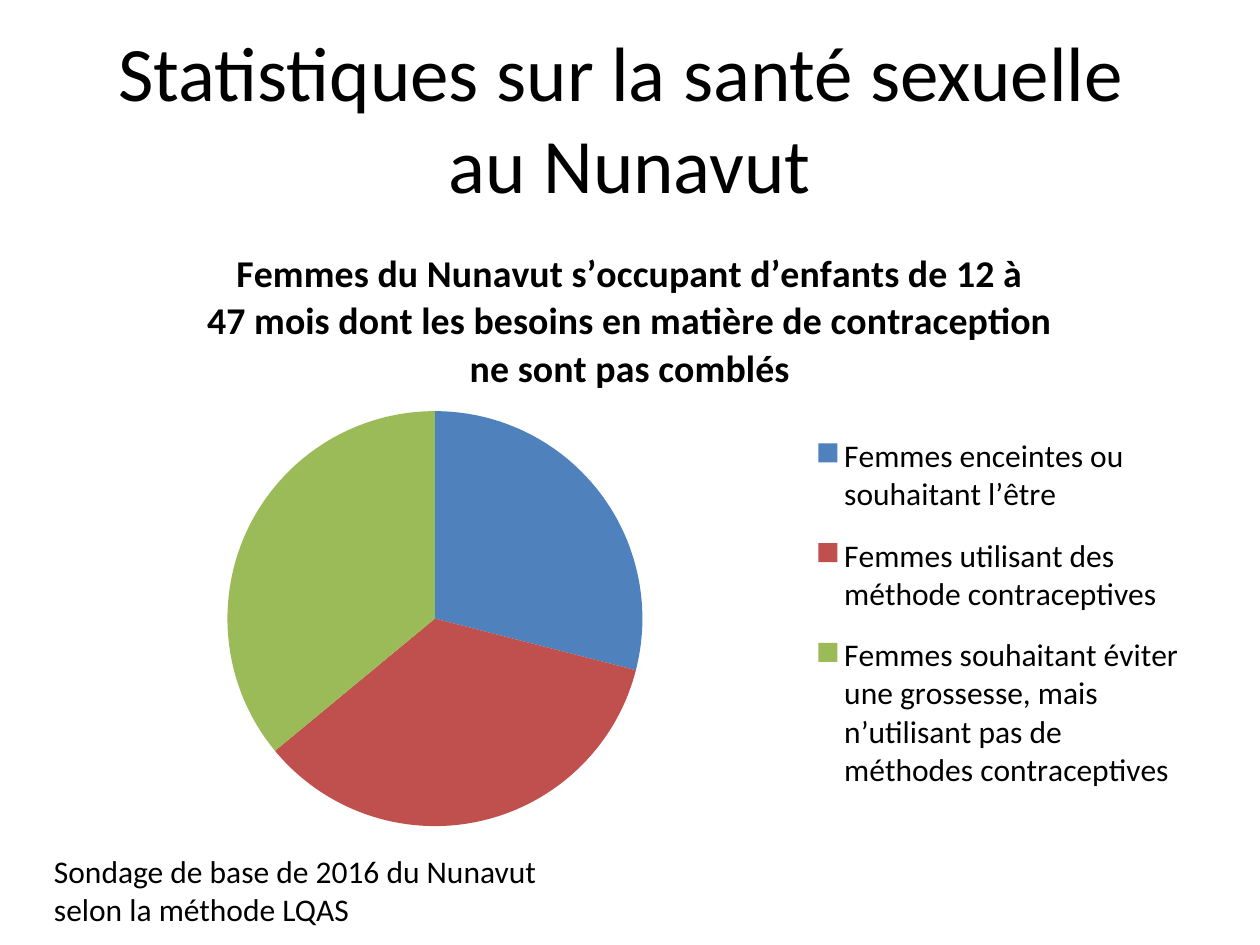
from dataclasses import dataclass

from lxml.etree import SubElement
from pptx import Presentation
from pptx.chart.chart import Chart
from pptx.chart.data import CategoryChartData
from pptx.dml.color import RGBColor
from pptx.enum.chart import XL_CHART_TYPE, XL_LEGEND_POSITION
from pptx.enum.text import MSO_ANCHOR, PP_ALIGN
from pptx.oxml.ns import qn
from pptx.slide import Slide
from pptx.util import Inches, Pt

FONT = "Calibri"
BLACK = RGBColor(0x00, 0x00, 0x00)
BLUE = RGBColor(0x4F, 0x81, 0xBD)
RED = RGBColor(0xC0, 0x50, 0x4D)
GREEN = RGBColor(0x9B, 0xBB, 0x59)
SLIDE_WIDTH, SLIDE_HEIGHT = Inches(10), Inches(7.5)


@dataclass(frozen=True)
class Area:
    """A rectangle given as shares of its container."""
    left: float
    top: float
    width: float
    height: float

    def on_slide(self) -> tuple[int, int, int, int]:
        return (int(self.left * SLIDE_WIDTH), int(self.top * SLIDE_HEIGHT),
                int(self.width * SLIDE_WIDTH), int(self.height * SLIDE_HEIGHT))


@dataclass(frozen=True)
class Answer:
    label: str
    percent: int
    color: RGBColor


ANSWERS = [
    Answer("Femmes enceintes ou souhaitant l’être", 29, BLUE),
    Answer("Femmes utilisant des méthode contraceptives", 35, RED),
    Answer("Femmes souhaitant éviter une grossesse, mais n’utilisant pas de "
           "méthodes contraceptives", 36, GREEN),
]
CHART_TITLE = ("Femmes du Nunavut s’occupant d’enfants de 12 à 47\u00a0mois dont les "
               "besoins en matière de contraception ne sont pas comblés")


def set_font(font, size: float, bold: bool = False) -> None:
    font.name, font.size, font.bold = FONT, Pt(size), bold
    font.color.rgb = BLACK


def add_text(slide: Slide, text: str, area: Area, *, size: float,
             align: PP_ALIGN = PP_ALIGN.LEFT,
             anchor: MSO_ANCHOR = MSO_ANCHOR.TOP) -> None:
    frame = slide.shapes.add_textbox(*area.on_slide()).text_frame
    frame.word_wrap = True
    frame.vertical_anchor = anchor
    frame.text = text
    paragraph = frame.paragraphs[0]
    paragraph.alignment = align
    set_font(paragraph.font, size)


def place_in_chart(element, area: Area, position: int, inner: bool = False) -> None:
    """Fix a chart part at an area given as shares of the chart."""
    for old in element.findall(qn("c:layout")):
        element.remove(old)
    layout = element.makeelement(qn("c:layout"))
    element.insert(position, layout)
    manual = SubElement(layout, qn("c:manualLayout"))
    settings = {"layoutTarget": "inner"} if inner else {}
    settings |= {"xMode": "edge", "yMode": "edge", "x": area.left, "y": area.top,
                 "w": area.width, "h": area.height}
    for tag, value in settings.items():
        SubElement(manual, qn(f"c:{tag}")).set("val", str(value))


def add_pie(slide: Slide, answers: list[Answer], title: str, area: Area) -> Chart:
    data = CategoryChartData()
    data.categories = [answer.label for answer in answers]
    data.add_series("Series 1", [answer.percent for answer in answers])
    chart = slide.shapes.add_chart(XL_CHART_TYPE.PIE, *area.on_slide(), data).chart
    set_font(chart.font, 18)

    chart.has_title = True
    chart.chart_title.text_frame.text = title
    set_font(chart.chart_title.text_frame.paragraphs[0].runs[0].font, 21.6, bold=True)

    chart.has_legend = True
    chart.legend.position = XL_LEGEND_POSITION.RIGHT
    chart.legend.include_in_layout = False
    set_font(chart.legend.font, 18)

    pie = chart.plots[0]
    pie.vary_by_categories = True
    for index, answer in enumerate(answers):
        fill = pie.series[0].points[index].format.fill
        fill.solid()
        fill.fore_color.rgb = answer.color
    return chart


def main() -> None:
    presentation = Presentation()
    presentation.slide_width, presentation.slide_height = SLIDE_WIDTH, SLIDE_HEIGHT
    slide = presentation.slides.add_slide(presentation.slide_layouts[6])

    add_text(slide, "Statistiques sur la santé sexuelle \vau Nunavut",
             Area(0.05, 0.04, 0.9, 0.167), size=44,
             align=PP_ALIGN.CENTER, anchor=MSO_ANCHOR.MIDDLE)

    chart = add_pie(slide, ANSWERS, CHART_TITLE, Area(0.05, 0.233, 0.9, 0.66))
    plot_area = chart.element.find(f".//{qn('c:plotArea')}")
    legend = chart.element.find(f".//{qn('c:legend')}")
    place_in_chart(plot_area, Area(0.145, 0.306, 0.366, 0.666), 0, inner=True)
    place_in_chart(legend, Area(0.66, 0.31, 0.33, 0.64), 1)

    add_text(slide, "Sondage de base de 2016 du Nunavut selon la méthode LQAS",
             Area(0.033, 0.895, 0.408, 0.095), size=18)

    presentation.save("out.pptx")


if __name__ == "__main__":
    main()
